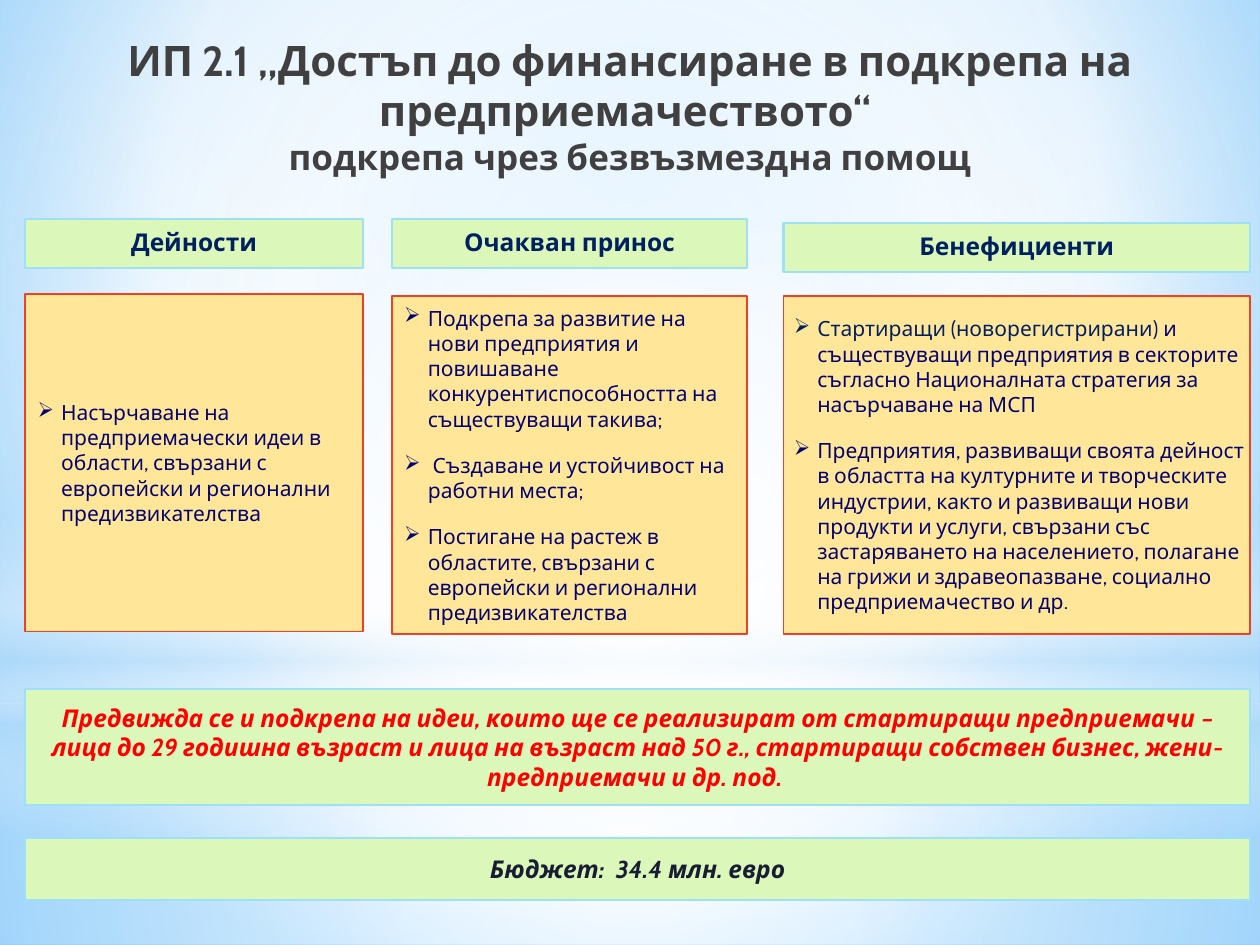
from dataclasses import dataclass, field

import pptx
import pptx.dml.color
import pptx.enum.shapes
import pptx.enum.text
import pptx.oxml
import pptx.oxml.ns
import pptx.util

Pt = pptx.util.Pt
KIND = pptx.enum.shapes.MSO_SHAPE
ALIGN = pptx.enum.text.PP_ALIGN


@dataclass(frozen=True)
class Theme:
    font: str = "Cabin"
    title: str = "404040"
    navy: str = "002060"
    ink: str = "040470"
    dark: str = "191D34"
    red: str = "FF0000"
    green: str = "DCF7BA"
    sky: str = "9EE0F8"
    sand: str = "FFE699"
    rust: str = "F14124"
    white: str = "FFFFFF"
    haze: str = "B4DCFA"
    big: int = 24
    sub: int = 20
    head: int = 14
    body: int = 12


T = Theme()


@dataclass(frozen=True)
class Rect:
    x: float
    y: float
    w: float
    h: float


@dataclass(frozen=True)
class Run:
    text: str
    size: int
    color: str
    bold: bool = False
    ital: bool = False


@dataclass(frozen=True)
class Para:
    runs: list[Run]
    bullet: bool = False
    lead: float = 1.0
    above: float = 0
    below: float = 0


@dataclass(frozen=True)
class Glow:
    """A gradient: stops are (percent, colour, opacity); no focus means linear."""
    stops: list[tuple[int, str, int]]
    focus: tuple[int, ...] = ()


@dataclass(frozen=True)
class Column:
    x: float
    w: float
    top: float
    low: float
    name: str
    items: list[Para]
    inset: tuple[float, float] = field(default=(7.2, 2.9))


def paint(fill, root, glow: Glow) -> None:
    fill.gradient()
    old = root.find(".//" + pptx.oxml.ns.qn("a:gradFill"))
    stops = "".join(
        f'<a:gs pos="{pos * 1000}"><a:srgbClr val="{color}">'
        f'<a:alpha val="{alpha * 1000}"/></a:srgbClr></a:gs>'
        for pos, color, alpha in glow.stops)
    way = '<a:lin ang="5400000" scaled="0"/>'
    if glow.focus:
        sides = " ".join(f'{side}="{part * 1000}"'
                         for side, part in zip("ltrb", glow.focus))
        way = f'<a:path path="circle"><a:fillToRect {sides}/></a:path>'
    new = pptx.oxml.parse_xml(
        f'<a:gradFill rotWithShape="1" {pptx.oxml.ns.nsdecls("a")}>'
        f'<a:gsLst>{stops}</a:gsLst>{way}</a:gradFill>')
    old.getparent().replace(old, new)


def mark(para) -> None:
    prop = para._p.get_or_add_pPr()
    prop.set("marL", str(Pt(13.5)))
    prop.set("indent", str(-Pt(13.5)))
    for body in ('buFont {} typeface="Wingdings"', 'buChar {} char="➢"'):
        if "Wingdings" in body:
            continue
        prop.append(pptx.oxml.parse_xml(
            f'<a:{body.format(pptx.oxml.ns.nsdecls("a"))}/>'))


def write(shape, paras: list[Para], inset: tuple[float, float] = (7.2, 7.2)) -> None:
    frame = shape.text_frame
    frame.word_wrap = True
    frame.vertical_anchor = pptx.enum.text.MSO_ANCHOR.MIDDLE
    frame.margin_left, frame.margin_right = map(Pt, inset)
    frame.margin_top = frame.margin_bottom = Pt(3.6)
    for num, item in enumerate(paras):
        para = frame.add_paragraph() if num else frame.paragraphs[0]
        para.alignment = ALIGN.LEFT if item.bullet else ALIGN.CENTER
        para.line_spacing = item.lead
        para.space_before, para.space_after = Pt(item.above), Pt(item.below)
        if item.bullet:
            mark(para)
        for part in item.runs:
            run = para.add_run()
            run.text = part.text
            font = run.font
            font.name, font.size = T.font, Pt(part.size)
            font.bold, font.italic = part.bold, part.ital
            font.color.rgb = pptx.dml.color.RGBColor.from_string(part.color)


def place(slide, kind, r: Rect):
    shape = slide.shapes.add_shape(kind, Pt(r.x), Pt(r.y), Pt(r.w), Pt(r.h))
    shape.shadow.inherit = False
    return shape


def panel(slide, r: Rect, fill: str, line: str, width: float):
    shape = place(slide, KIND.RECTANGLE, r)
    shape.fill.solid()
    shape.fill.fore_color.rgb = pptx.dml.color.RGBColor.from_string(fill)
    shape.line.color.rgb = pptx.dml.color.RGBColor.from_string(line)
    shape.line.width = Pt(width)
    return shape


def point(*runs: Run) -> Para:
    return Para(list(runs), bullet=True, above=6, below=6)


def ink(text: str) -> Run:
    return Run(text, T.body, T.ink)


MID = (50, 50, 50, 50)
BACK = Glow([(0, "9ED5FF", 100), (60, T.white, 100), (100, "5BB9FF", 100)],
            (20, 10, 20, 60))
LIGHTS = [
    (KIND.RECTANGLE, Rect(0, 401.8, 720, 138.2),
     Glow([(0, T.white, 91), (37, T.white, 76), (100, T.haze, 79)], MID)),
    (KIND.RECTANGLE, Rect(0, 0, 720, 401.8),
     Glow([(0, T.white, 89), (48, T.white, 62), (100, T.haze, 79)], MID)),
    (KIND.RECTANGLE, Rect(0, 296.6, 720, 180),
     Glow([(0, T.white, 0), (29, T.white, 30), (45, T.haze, 40),
           (55, T.white, 26), (65, T.haze, 60), (100, T.white, 0)])),
    (KIND.OVAL, Rect(0, 126, 720, 401.8),
     Glow([(0, T.white, 100), (56, T.white, 0)], MID)),
]
COLUMNS = [
    Column(14.4, 193, 125.3, 167.8, "Дейности", [
        point(ink("Насърчаване на предприемачески идеи в области, свързани с европейски и регионални предизвикателства"))]),
    Column(223.9, 203, 125.3, 169.2, "Очакван принос", [
        point(ink("Подкрепа за развитие на нови предприятия и повишаване конкурентиспособността на съществуващи такива;")),
        point(ink(" Създаване и устойчивост на работни места;")),
        point(ink("Постигане на растеж в областите, свързани с европейски и регионални предизвикателства"))]),
    Column(447.8, 266.4, 127.4, 169.2, "Бенефициенти", [
        point(Run("Стартиращи (новорегистрирани) ", T.body, T.navy),
              ink("и съществуващи предприятия в секторите съгласно Националната стратегия за насърчаване на МСП")),
        point(ink("Предприятия, развиващи своята дейност в областта на културните и творческите индустрии, както и развиващи нови продукти и услуги, свързани със застаряването на населението, полагане на грижи и здравеопазване, социално предприемачество и др."))],
        (5.8, 0)),
]
BANDS = [
    (393.8, 66.2, T.red, "Предвижда се и подкрепа на идеи, които ще се реализират от стартиращи предприемачи – лица до 29 годишна възраст и лица на възраст над 50 г., стартиращи собствен бизнес, жени-предприемачи и др. под. "),
    (478.8, 35.3, T.dark, "Бюджет:  34.4 млн. евро"),
]


def main() -> None:
    deck = pptx.Presentation()
    deck.slide_width, deck.slide_height = Pt(720), Pt(540)
    slide = deck.slides.add_slide(deck.slide_layouts[6])

    # Background and light effects
    paint(slide.background.fill, slide._element, BACK)
    for kind, rect, glow in LIGHTS:
        shape = place(slide, kind, rect)
        shape.line.fill.background()
        paint(shape.fill, shape._element, glow)

    # Title
    box = slide.shapes.add_textbox(Pt(0), Pt(20.9), Pt(720), Pt(79.2))
    write(box, [
        Para([Run("ИП 2.1 „Достъп до финансиране в подкрепа на предприемачеството“ ",
                  T.big, T.title, True)]),
        Para([Run("подкрепа чрез безвъзмездна помощ", T.sub, T.title, True)])])

    # Columns: heading above, list below
    for col in COLUMNS:
        head = panel(slide, Rect(col.x, col.top, col.w, 28), T.green, T.sky, 1.25)
        write(head, [Para([Run(col.name, T.head, T.navy, True)], lead=0.9)])
        body = panel(slide, Rect(col.x, col.low, col.w, 193), T.sand, T.rust, 1)
        write(body, col.items, col.inset)

    # Bands across the foot
    for top, tall, color, text in BANDS:
        band = panel(slide, Rect(14.4, top, 699.8, tall), T.green, T.sky, 1.25)
        write(band, [Para([Run(text, T.head, color, True, True)], above=6)])

    deck.save("out.pptx")


if __name__ == "__main__":
    main()
